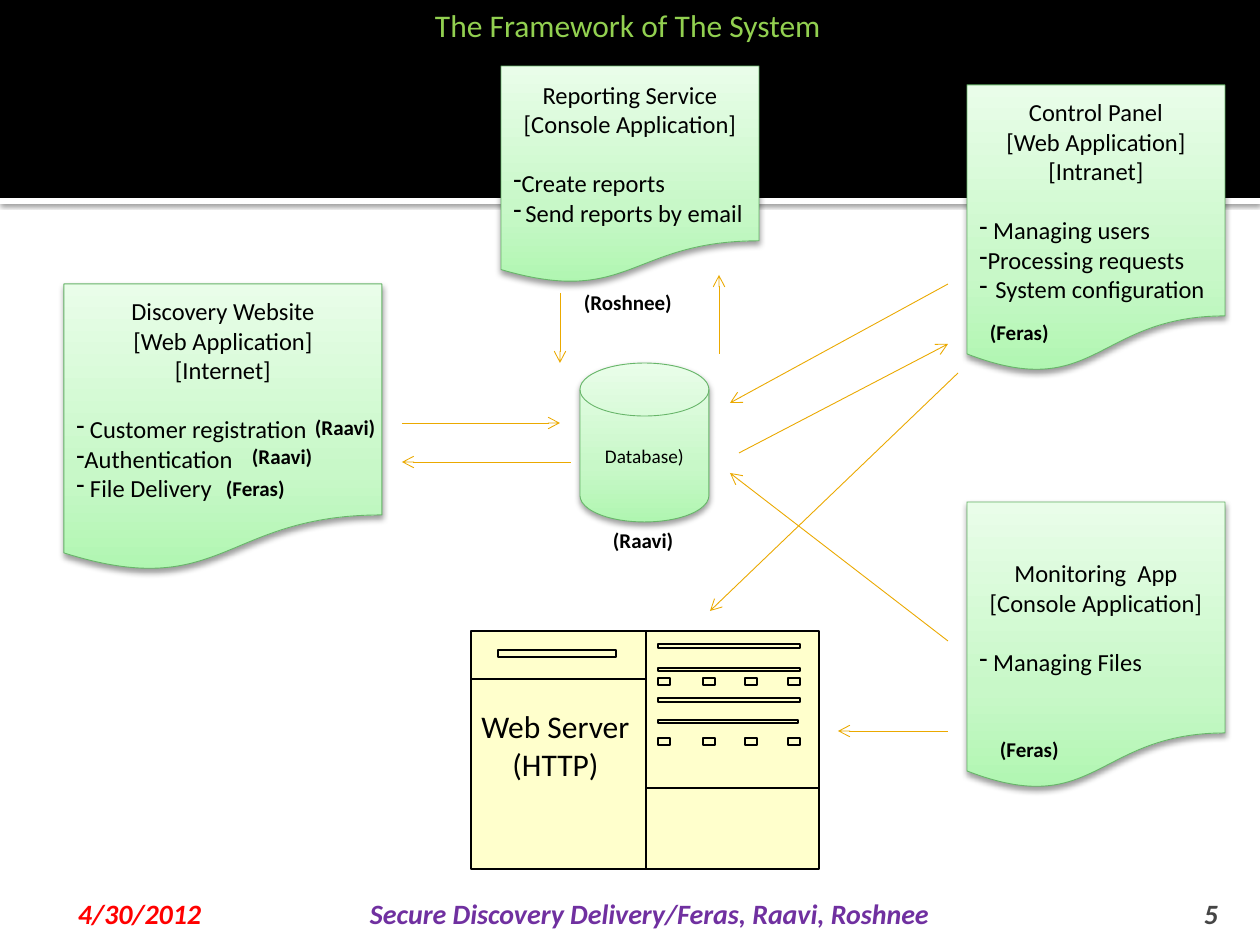
"""Build the system framework slide."""
from typing import NamedTuple

from lxml import etree
from pptx import Presentation
from pptx import util as u
from pptx.dml.color import RGBColor
from pptx.enum import shapes, text
from pptx.oxml.ns import qn

SCALE = u.Inches(1) / 126
FONT = "Calibri"
BLACK, GREEN_LINE, CREAM, ORANGE = "000000", "67B569", "FFFFCC", "EBA900"
GREENS = ((0, "B0F6B1"), (35, "C8F8C8"), (100, "E9FDE9"))
LEFT, CENTER, RIGHT = text.PP_ALIGN.LEFT, text.PP_ALIGN.CENTER, text.PP_ALIGN.RIGHT
TOP, BOTTOM = text.MSO_ANCHOR.TOP, text.MSO_ANCHOR.BOTTOM


class Box(NamedTuple):
    x: int
    y: int
    w: int
    h: int


class Module(NamedTuple):
    box: Box
    heading: tuple
    bullets: tuple
    last_align: text.PP_ALIGN = LEFT


class Label(NamedTuple):
    box: Box
    lines: tuple
    size: int = 12
    color: str = BLACK
    bold: bool = True
    italic: bool = False
    align: text.PP_ALIGN = LEFT
    anchor: text.MSO_ANCHOR = TOP
    insets: tuple = (13, 6, 13, 6)


MODULES = (
    Module(Box(501, 66, 258, 218), ("Reporting Service", "[Console Application]"),
           ("Create reports", "Send reports by email"), CENTER),
    Module(Box(967, 85, 258, 288), ("Control Panel", "[Web Application]", "[Intranet]"),
           (" Managing users", "Processing requests", "System configuration"), CENTER),
    Module(Box(967, 502, 258, 288), ("Monitoring  App", "[Console Application]"),
           (" Managing Files",)),
    Module(Box(64, 284, 318, 288), ("Discovery Website", "[Web Application]", "[Internet]"),
           (" Customer registration", "Authentication", " File Delivery")),
)
ARROWS = (
    (719, 354, 719, 275), (560, 293, 560, 363), (402, 423, 560, 423),
    (571, 462, 402, 462), (948, 284, 730, 403), (739, 453, 948, 344),
    (958, 373, 710, 611), (948, 731, 838, 731), (948, 641, 730, 473),
)
OWNERS = (
    ("(Feras)", 213, 470, 89), ("(Feras)", 987, 731, 89), ("(Feras)", 977, 314, 89),
    ("(Raavi)", 239, 438, 89), ("(Raavi)", 302, 409, 89), ("(Raavi)", 600, 522, 89),
    ("(Roshnee)", 571, 284, 129),
)
CAPTIONS = (
    Label(Box(461, 701, 189, 89), ("Web Server", "(HTTP)"), 18, bold=False, align=CENTER),
    Label(Box(422, 0, 436, 50), ("The Framework of The System",), 18, "92D050", False),
    Label(Box(63, 892, 294, 38), ("4/30/2012",), 16, "FF0000", italic=True,
          anchor=BOTTOM, insets=(15, 6, 6, 0)),
    Label(Box(364, 892, 758, 38), ("Secure Discovery Delivery/Feras, Raavi, Roshnee",),
          16, "7030A0", italic=True, anchor=BOTTOM, insets=(6, 6, 6, 0)),
    Label(Box(1130, 892, 101, 38), ("5",), 16, "454545", italic=True,
          align=RIGHT, anchor=BOTTOM, insets=(13, 6, 13, 0)),
)
SERVER = Box(471, 631, 348, 238)
SLOTS = (Box(498, 650, 118, 7), Box(658, 644, 142, 4), Box(658, 668, 142, 3),
         Box(658, 698, 142, 4), Box(658, 720, 140, 3))
BUTTONS = tuple(Box(x, y, 12, 7) for y in (678, 738) for x in (658, 703, 745, 788))


def px(n: int) -> u.Emu:
    return u.Emu(round(n * SCALE))


def rgb(value: str) -> RGBColor:
    return RGBColor.from_string(value)


def sub(parent, tag: str, **attrs):
    return etree.SubElement(parent, qn(tag), {k: str(v) for k, v in attrs.items()})


def add_color(parent, value: str, alpha: int = 100) -> None:
    color = sub(parent, "a:srgbClr", val=value)
    if alpha < 100:
        sub(color, "a:alpha", val=alpha * 1000)


def add_shadow(sp, alpha: int, blur: float, dist: float) -> None:
    effects = sp._element.spPr.find(qn("a:effectLst"))
    shadow = sub(effects, "a:outerShdw", blurRad=u.Pt(blur), dist=u.Pt(dist),
                 dir=5400000, algn="ctr", rotWithShape=0)
    add_color(shadow, BLACK, alpha)


def add_shape(s, kind, box: Box, fill: str = "", line: str = "", width: float = 0.5):
    sp = s.shapes.add_shape(kind, *map(px, box))
    sp.shadow.inherit = False
    if fill:
        sp.fill.solid()
        sp.fill.fore_color.rgb = rgb(fill)
    if line:
        sp.line.color.rgb = rgb(line)
        sp.line.width = u.Pt(width)
    else:
        sp.line.fill.background()
    return sp


def add_green_shape(s, kind, box: Box):
    sp = add_shape(s, kind, box, line=GREEN_LINE)
    sp.fill.gradient()
    sp.fill.gradient_angle = 90
    stops = sp._element.spPr.find(".//" + qn("a:gsLst"))
    for stop in list(stops):
        stops.remove(stop)
    for pos, value in GREENS:
        add_color(sub(stops, "a:gs", pos=pos * 1000), value)
    add_shadow(sp, 38, 3.5, 2)
    return sp


def add_line(tf, i: int, words: str, size: int, color: str = BLACK, align=CENTER,
             bold: bool = False, italic: bool = False):
    p = tf.add_paragraph() if i else tf.paragraphs[0]
    p.alignment = align
    r = p.add_run()
    r.text = words
    f = r.font
    f.name, f.size, f.bold, f.italic = FONT, u.Pt(size), bold, italic
    f.color.rgb = rgb(color)
    return p


def add_module(s, module: Module) -> None:
    tf = add_green_shape(s, shapes.MSO_SHAPE.FLOWCHART_DOCUMENT, module.box).text_frame
    tf.word_wrap = True
    tf.vertical_anchor = text.MSO_ANCHOR.MIDDLE
    first = len(module.heading)
    for i, words in enumerate(module.heading + module.bullets):
        p = add_line(tf, i, words, 14)
        if i >= first:
            is_last = i == first + len(module.bullets) - 1
            p.alignment = module.last_align if is_last else LEFT
            if i == first:
                p.space_before = u.Pt(17)
            sub(p._p.get_or_add_pPr(), "a:buChar", char="-")


def add_label(s, label: Label) -> None:
    tf = s.shapes.add_textbox(*map(px, label.box)).text_frame
    tf.word_wrap = True
    tf.vertical_anchor = label.anchor
    tf.margin_left, tf.margin_top, tf.margin_right, tf.margin_bottom = map(px, label.insets)
    for i, words in enumerate(label.lines):
        add_line(tf, i, words, label.size, label.color, label.align, label.bold, label.italic)


def add_arrow(s, ends: tuple) -> None:
    cx = s.shapes.add_connector(shapes.MSO_CONNECTOR.STRAIGHT, *map(px, ends))
    cx.line.color.rgb = rgb(ORANGE)
    cx.line.width = u.Pt(0.5)
    sub(cx.line._get_or_add_ln(), "a:tailEnd", type="arrow")
    sub(cx._element.spPr, "a:effectLst")


def add_server(s) -> None:
    add_shape(s, shapes.MSO_SHAPE.RECTANGLE, SERVER, CREAM, BLACK, 0.75)
    right, bottom, split = SERVER.x + SERVER.w, SERVER.y + SERVER.h, 646
    fb = s.shapes.build_freeform(SERVER.x, 679, scale=SCALE)
    fb.add_line_segments([(split, 679), (split, 788), (right, 788)], close=False)
    fb.move_to(split, SERVER.y)
    fb.add_line_segments([(split, bottom)], close=False)
    for x, y, w, h in SLOTS + BUTTONS:
        fb.move_to(x, y)
        fb.add_line_segments([(x + w, y), (x + w, y + h), (x, y + h)])
    sp = fb.convert_to_shape()
    sp.shadow.inherit = False
    sp.fill.background()
    sp.line.color.rgb = rgb(BLACK)
    sp.line.width = u.Pt(0.75)


def main() -> None:
    prs = Presentation()
    prs.slide_width, prs.slide_height = px(1260), px(945)
    s = prs.slides.add_slide(prs.slide_layouts[6])
    rect = shapes.MSO_SHAPE.RECTANGLE
    add_shadow(add_shape(s, rect, Box(0, 198, 1260, 6), "FFFFFF"), 60, 2.5, 0.8)
    add_shape(s, rect, Box(0, 0, 1260, 198), BLACK)
    database = add_green_shape(s, shapes.MSO_SHAPE.FLOWCHART_MAGNETIC_DISK, Box(580, 363, 129, 159))
    add_line(database.text_frame, 0, "Database)", 11)
    add_server(s)
    for module in MODULES:
        add_module(s, module)
    for ends in ARROWS:
        add_arrow(s, ends)
    for name, x, y, w in OWNERS:
        add_label(s, Label(Box(x, y, w, 38), (name,)))
    for caption in CAPTIONS:
        add_label(s, caption)
    prs.save("out.pptx")


if __name__ == "__main__":
    main()
